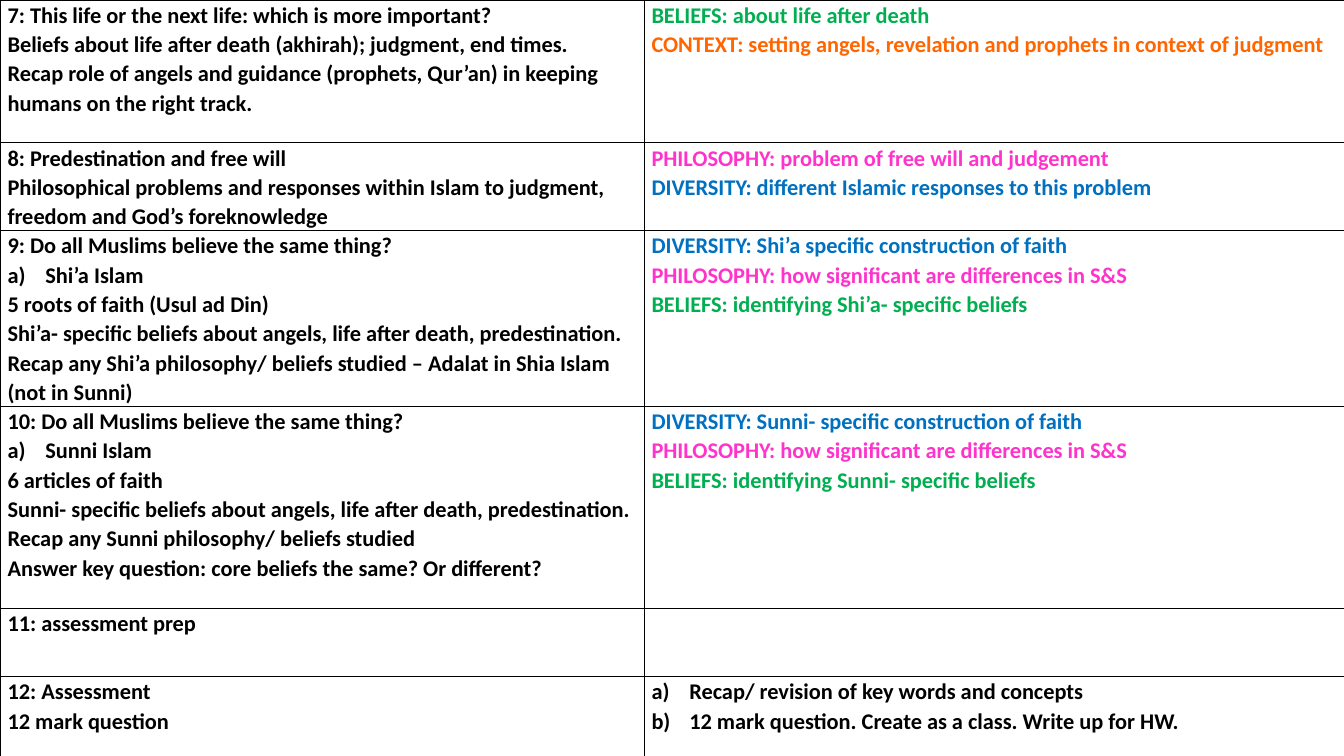
from dataclasses import dataclass

from lxml.etree import SubElement
from pptx import Presentation
from pptx.dml.color import RGBColor
from pptx.oxml import parse_xml
from pptx.oxml.ns import nsdecls, qn
from pptx.util import Pt


@dataclass(frozen=True)
class Theme:
    font: str = "Calibri"
    size: float = 16
    line_spacing: float = 1.07
    ink: str = "000000"
    paper: str = "FFFFFF"
    beliefs: str = "00B050"
    context: str = "FF6600"
    philosophy: str = "FF33CC"
    diversity: str = "0070C0"
    rule: float = 0.5
    margin: float = 5.4
    indent: float = 27

    def strand(self, text):
        """Colour for the strand label that opens a line, else ink."""
        label = text.split(":")[0]
        return getattr(self, label.lower()) if label.isupper() else self.ink


@dataclass(frozen=True)
class Lettered:
    text: str


WIDTH, HEIGHT = 960, 540
COLUMNS = [460, 500]
LESSONS = [
    (102,
     ["7: This life or the next life: which is more important?",
      "Beliefs about life after death (akhirah); judgment, end times.",
      "Recap role of angels and guidance (prophets, Qur’an) in keeping humans on the right track."],
     ["BELIEFS: about life after death",
      "CONTEXT: setting angels, revelation and prophets in context of judgment"]),
    (61,
     ["8: Predestination and free will",
      "Philosophical problems and responses within Islam to judgment, "
      "freedom and God’s foreknowledge"],
     ["PHILOSOPHY: problem of free will and judgement",
      "DIVERSITY: different Islamic responses to this problem"]),
    (123,
     ["9: Do all Muslims believe the same thing?",
      Lettered("Shi’a Islam"),
      "5 roots of faith (Usul ad Din)",
      "Shi’a- specific beliefs about angels, life after death, predestination.",
      "Recap any Shi’a philosophy/ beliefs studied – Adalat in Shia Islam (not in Sunni)"],
     ["DIVERSITY: Shi’a specific construction of faith",
      "PHILOSOPHY: how significant are differences in S&S",
      "BELIEFS: identifying Shi’a- specific beliefs"]),
    (144,
     ["10: Do all Muslims believe the same thing?",
      Lettered("Sunni Islam"),
      "6 articles of faith",
      "Sunni- specific beliefs about angels, life after death, predestination.",
      "Recap any Sunni philosophy/ beliefs studied",
      "Answer key question: core beliefs the same? Or different?"],
     ["DIVERSITY: Sunni- specific construction of faith",
      "PHILOSOPHY: how significant are differences in S&S",
      "BELIEFS: identifying Sunni- specific beliefs"]),
    (49, ["11: assessment prep"], []),
    (61,
     ["12: Assessment", "12 mark question"],
     [Lettered("Recap/ revision of key words and concepts"),
      Lettered("12 mark question. Create as a class. Write up for HW.")]),
]


class Deck:
    def __init__(self, theme):
        self.theme = theme
        self.prs = Presentation()
        self.prs.slide_width, self.prs.slide_height = Pt(WIDTH), Pt(HEIGHT)
        self.s = None

    def slide(self):
        self.s = self.prs.slides.add_slide(self.prs.slide_layouts[6])

    def paragraph(self, p, text, lettered=False):
        p.line_spacing = self.theme.line_spacing
        if lettered:
            pPr = p._p.get_or_add_pPr()
            pPr.set("marL", str(Pt(self.theme.indent)))
            pPr.set("indent", str(-Pt(self.theme.indent)))
            SubElement(pPr, qn("a:buAutoNum"), type="alphaLcParenR")
        r = p.add_run()
        r.text = text
        r.font.name = self.theme.font
        r.font.size = Pt(self.theme.size)
        r.font.bold = True
        r.font.color.rgb = RGBColor.from_string(self.theme.strand(text))

    def borders(self, cell):
        tcPr = cell._tc.get_or_add_tcPr()
        for i, side in enumerate("LRTB"):
            tcPr.insert(i, parse_xml(
                f'<a:ln{side} {nsdecls("a")} w="{Pt(self.theme.rule)}"><a:solidFill>'
                f'<a:srgbClr val="{self.theme.ink}"/></a:solidFill></a:ln{side}>'))

    def cell(self, cell, lines):
        cell.margin_left = cell.margin_right = Pt(self.theme.margin)
        cell.margin_top = cell.margin_bottom = 0
        cell.fill.solid()
        cell.fill.fore_color.rgb = RGBColor.from_string(self.theme.paper)
        self.borders(cell)
        tf = cell.text_frame
        for i, line in enumerate(lines):
            p = tf.add_paragraph() if i else tf.paragraphs[0]
            lettered = isinstance(line, Lettered)
            self.paragraph(p, line.text if lettered else line, lettered=lettered)

    def table(self, columns, rows):
        """Fill the slide with a table; each row is (height, *cells)."""
        table = self.s.shapes.add_table(
            len(rows), len(columns), 0, 0, Pt(WIDTH), Pt(HEIGHT)).table
        table.first_row = table.horz_banding = False
        for column, width in zip(table.columns, columns):
            column.width = Pt(width)
        for row, (height, *cells) in zip(table.rows, rows):
            row.height = Pt(height)
            for cell, lines in zip(row.cells, cells):
                self.cell(cell, lines)


def main():
    deck = Deck(Theme())
    deck.slide()
    deck.table(COLUMNS, LESSONS)
    deck.prs.save("out.pptx")


if __name__ == "__main__":
    main()
